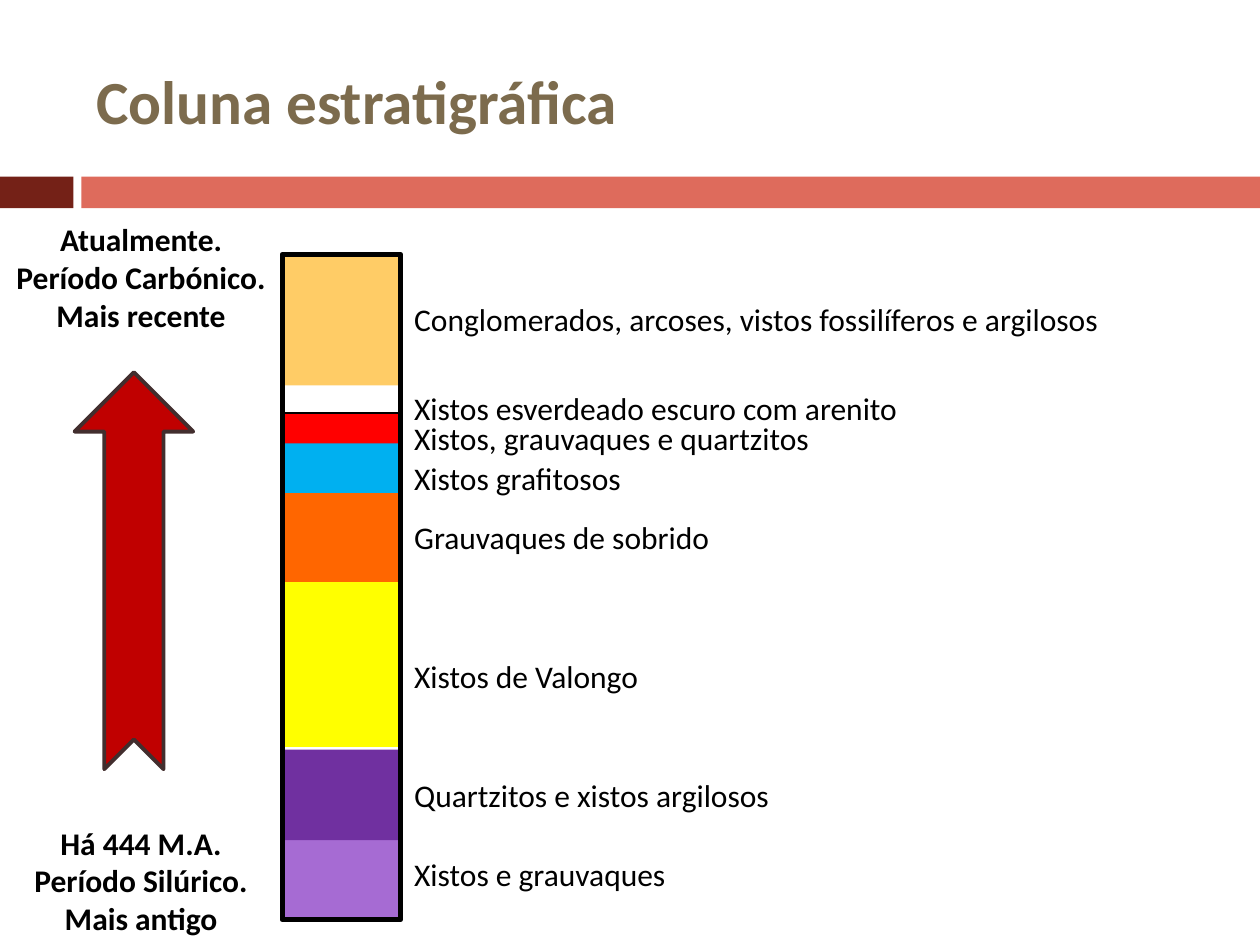
from pptx import Presentation
from pptx.dml.color import RGBColor
from pptx.enum.shapes import MSO_SHAPE
from pptx.enum.text import MSO_ANCHOR, PP_ALIGN
from pptx.util import Cm, Pt

RECT, ARROW = MSO_SHAPE.RECTANGLE, MSO_SHAPE.NOTCHED_RIGHT_ARROW
LEFT, CENTER = PP_ALIGN.LEFT, PP_ALIGN.CENTER
TOP, MIDDLE = MSO_ANCHOR.TOP, MSO_ANCHOR.MIDDLE

THEME = {
    "font": "Calibri", "title_size": 35, "body_size": 18,
    "title": "7C6B4D", "text": "000000", "outline": "000000",
    "band_dark": "742117", "band": "DE6B5C",
    "arrow": "C00000", "arrow_line": "422E2E",
}

TITLE = "Coluna estratigráfica"

# name, fill, top, height, label top (cm), from youngest to oldest
STRATA = [
    ("Conglomerados, arcoses, vistos fossilíferos e argilosos", "FFCC66", 5.13, 2.64, 5.92),
    ("Xistos esverdeado escuro com arenito", None, 7.72, 0.61, 7.72),
    ("Xistos, grauvaques e quartzitos", "FF0000", 8.33, 0.61, 8.33),
    ("Xistos grafitosos", "00B0F0", 8.92, 1.02, 9.12),
    ("Grauvaques de sobrido", "FF6600", 9.93, 1.8, 10.31),
    ("Xistos de Valongo", "FFFF00", 11.73, 3.33, 13.13),
    ("Quartzitos e xistos argilosos", "7030A0", 15.11, 1.83, 15.52),
    ("Xistos e grauvaques", "A66BD3", 16.71, 1.8, 17.12),
]

# paragraphs, top, height (cm)
AGES = [
    (["Atualmente. Período Carbónico.", "Mais recente"], 4.32, 3.33),
    (["Há 444 M.A. Período Silúrico.", "Mais antigo"], 16.48, 2.57),
]

COLUMN_LEFT, COLUMN_WIDTH, COLUMN_TOP, COLUMN_HEIGHT = 5.69, 2.39, 5.13, 13.41
LABEL_LEFT, LABEL_WIDTH, LABEL_HEIGHT = 8.1, 15, 1.02

prs = Presentation()
prs.slide_width, prs.slide_height = Cm(25.4), Cm(19.05)
s = prs.slides.add_slide(prs.slide_layouts[6])


def add_block(kind, left, top, width, height, fill=None, line=None, line_width=0.75):
    sp = s.shapes.add_shape(kind, Cm(left), Cm(top), Cm(width), Cm(height))
    sp.shadow.inherit = False
    if fill:
        sp.fill.solid()
        sp.fill.fore_color.rgb = RGBColor.from_string(fill)
    else:
        sp.fill.background()
    if line:
        sp.line.color.rgb = RGBColor.from_string(line)
        sp.line.width = Pt(line_width)
    else:
        sp.line.fill.background()
    return sp


def add_text(paragraphs, left, top, width, height, size=THEME["body_size"],
             color=THEME["text"], bold=False, align=LEFT, anchor=TOP):
    tf = s.shapes.add_textbox(Cm(left), Cm(top), Cm(width), Cm(height)).text_frame
    tf.word_wrap = True
    tf.vertical_anchor = anchor
    tf.text = "\n".join(paragraphs)
    for p in tf.paragraphs:
        p.alignment = align
        for r in p.runs:
            r.font.name = THEME["font"]
            r.font.size = Pt(size)
            r.font.bold = bold
            r.font.color.rgb = RGBColor.from_string(color)


add_block(RECT, 0, 3.56, 1.48, 0.64, THEME["band_dark"])
add_block(RECT, 1.64, 3.56, 23.76, 0.64, THEME["band"])
add_text([TITLE], 1.69, 0.64, 22.66, 2.74, THEME["title_size"], THEME["title"],
         bold=True, anchor=MIDDLE)

for name, fill, top, height, label_top in reversed(STRATA):
    add_block(RECT, COLUMN_LEFT, top, COLUMN_WIDTH, height, fill,
              line=None if fill else THEME["outline"])
    add_text([name], LABEL_LEFT, label_top, LABEL_WIDTH, LABEL_HEIGHT)
add_block(RECT, COLUMN_LEFT, COLUMN_TOP, COLUMN_WIDTH, COLUMN_HEIGHT,
          line=THEME["outline"], line_width=3)

for paragraphs, top, height in AGES:
    add_text(paragraphs, 0, top, COLUMN_LEFT, height, bold=True, align=CENTER)

time_arrow = add_block(ARROW, -1.3, 10.31, 8, 2.39, THEME["arrow"], THEME["arrow_line"], 2.25)
time_arrow.rotation = 270

prs.save("out.pptx")
